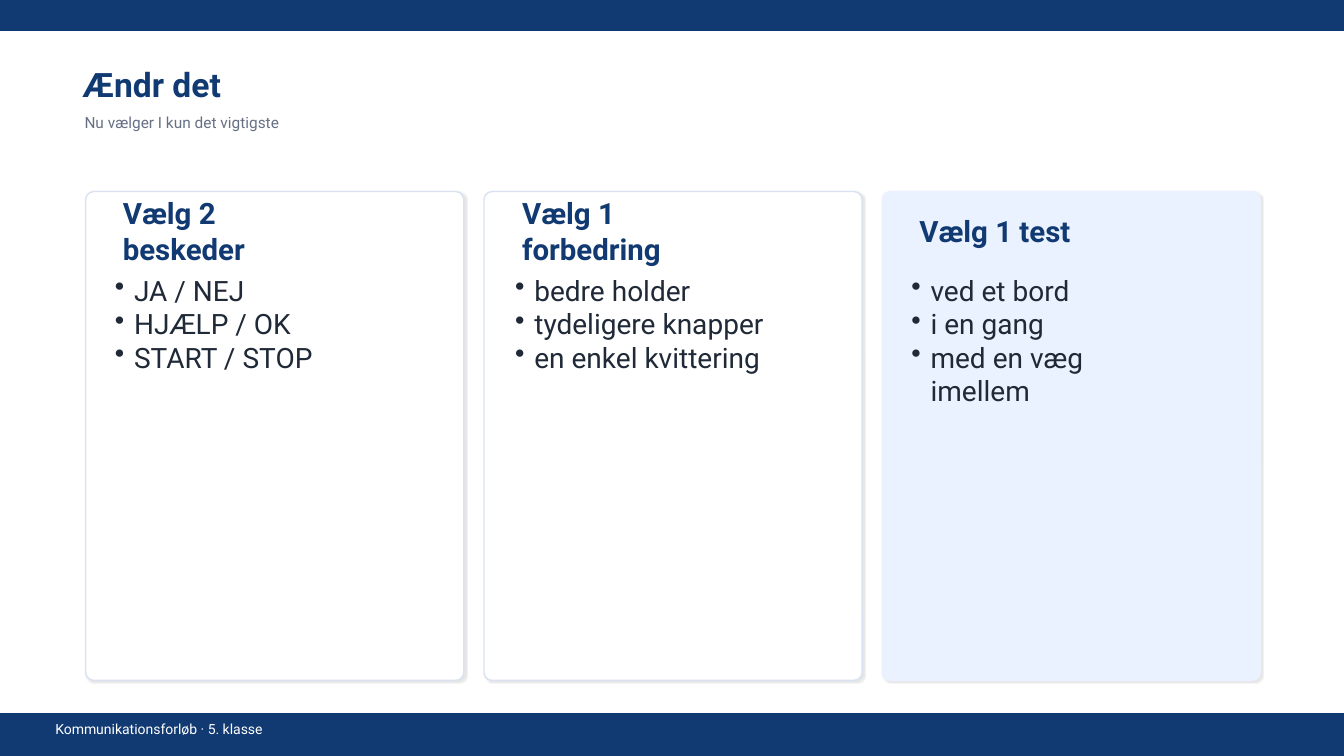
from lxml import etree
from pptx import Presentation
from pptx.dml.color import RGBColor
from pptx.enum.shapes import MSO_SHAPE
from pptx.enum.text import MSO_ANCHOR
from pptx.oxml import parse_xml
from pptx.oxml.ns import qn
from pptx.util import Inches, Pt

RECT, ROUND = MSO_SHAPE.RECTANGLE, MSO_SHAPE.ROUNDED_RECTANGLE
TOP, MIDDLE = MSO_ANCHOR.TOP, MSO_ANCHOR.MIDDLE

NAVY, WHITE, GREY, INK = "123A72", "FFFFFF", "667085", "1F2937"
EDGE, PALE = "D8E2F0", "EAF2FF"
FONT = "Roboto"
WIDE, HIGH = 13.33, 7.5

BARS = [(0, 0.3), (7.08, 0.42)]
LABELS = [
    ("Kommunikationsforløb · 5. klasse", (0.45, 7.16, 8, 0.15), 10, WHITE, False),
    ("Ændr det", (0.72, 0.62, 11.1, 0.42), 24, NAVY, True),
    ("Nu vælger I kun det vigtigste", (0.74, 1.1, 10.8, 0.22), 11, GREY, False),
]
CARDS = [
    {"head": "Vælg 2 beskeder", "items": ["JA / NEJ", "HJÆLP / OK", "START / STOP"],
     "fill": WHITE, "line": EDGE, "inset": (0.27, 0.23), "width": (2.2, 2.7)},
    {"head": "Vælg 1 forbedring",
     "items": ["bedre holder", "tydeligere knapper", "en enkel kvittering"],
     "fill": WHITE, "line": EDGE, "inset": (0.28, 0.25), "width": (2.4, 2.9)},
    {"head": "Vælg 1 test", "items": ["ved et bord", "i en gang", "med en væg imellem"],
     "fill": PALE, "line": PALE, "inset": (0.27, 0.23), "width": (2, 2.8)},
]
LEFT, UPPER, CARD_W, CARD_H, GAP = 0.85, 1.9, 3.75, 4.85, 0.2
HEAD_Y, LIST_Y = UPPER + 0.25, UPPER + 0.75

SHADOW = (
    '<a:effectLst xmlns:a="http://schemas.openxmlformats.org/drawingml/2006/main">'
    '<a:outerShdw blurRad="12700" dist="15240" dir="2700000" algn="bl" rotWithShape="0">'
    '<a:srgbClr val="000000"><a:alpha val="10000"/></a:srgbClr>'
    '</a:outerShdw></a:effectLst>'
)


def color(code):
    return RGBColor.from_string(code)


def add_box(slide, kind, area, fill, line):
    box = slide.shapes.add_shape(kind, *map(Inches, area))
    box.shadow.inherit = False
    box.fill.solid()
    box.fill.fore_color.rgb = color(fill)
    box.line.color.rgb = color(line)
    box.line.width = Pt(1)
    return box


def add_card(slide, area, fill, line):
    card = add_box(slide, ROUND, area, fill, line)
    card.adjustments[0] = 0.021
    props = card.element.spPr
    props.replace(props.find(qn("a:effectLst")), parse_xml(SHADOW))


def add_bullet(para):
    props = para._p.get_or_add_pPr()
    props.set("marL", str(Inches(0.19)))
    props.set("indent", str(-Inches(0.19)))
    etree.SubElement(props, qn("a:buChar")).set("char", "•")


def add_text(slide, lines, area, size, ink, bold=False, bullets=False):
    frame = slide.shapes.add_textbox(*map(Inches, area)).text_frame
    frame.word_wrap = True
    frame.vertical_anchor = TOP if bullets else MIDDLE
    if bullets:
        frame.margin_left = frame.margin_right = Inches(0.06)
        frame.margin_top = frame.margin_bottom = Inches(0.06)
    frame.text = "\n".join(lines)
    for para in frame.paragraphs:
        if bullets:
            add_bullet(para)
        for run in para.runs:
            run.font.name = FONT
            run.font.size = Pt(size)
            run.font.bold = bold
            run.font.color.rgb = color(ink)


def main():
    deck = Presentation()
    deck.slide_width, deck.slide_height = Inches(WIDE), Inches(HIGH)
    slide = deck.slides.add_slide(deck.slide_layouts[6])

    for y, tall in BARS:
        add_box(slide, RECT, (0, y, WIDE, tall), NAVY, NAVY)
    for text, area, size, ink, bold in LABELS:
        add_text(slide, [text], area, size, ink, bold)

    for i, card in enumerate(CARDS):
        x = LEFT + i * (CARD_W + GAP)
        head_in, list_in = card["inset"]
        head_w, list_w = card["width"]
        add_card(slide, (x, UPPER, CARD_W, CARD_H), card["fill"], card["line"])
        add_text(slide, [card["head"]], (x + head_in, HEAD_Y, head_w, 0.28), 21, NAVY, True)
        add_text(slide, card["items"], (x + list_in, LIST_Y, list_w, 1.8), 20, INK, bullets=True)

    deck.save("out.pptx")


if __name__ == "__main__":
    main()
